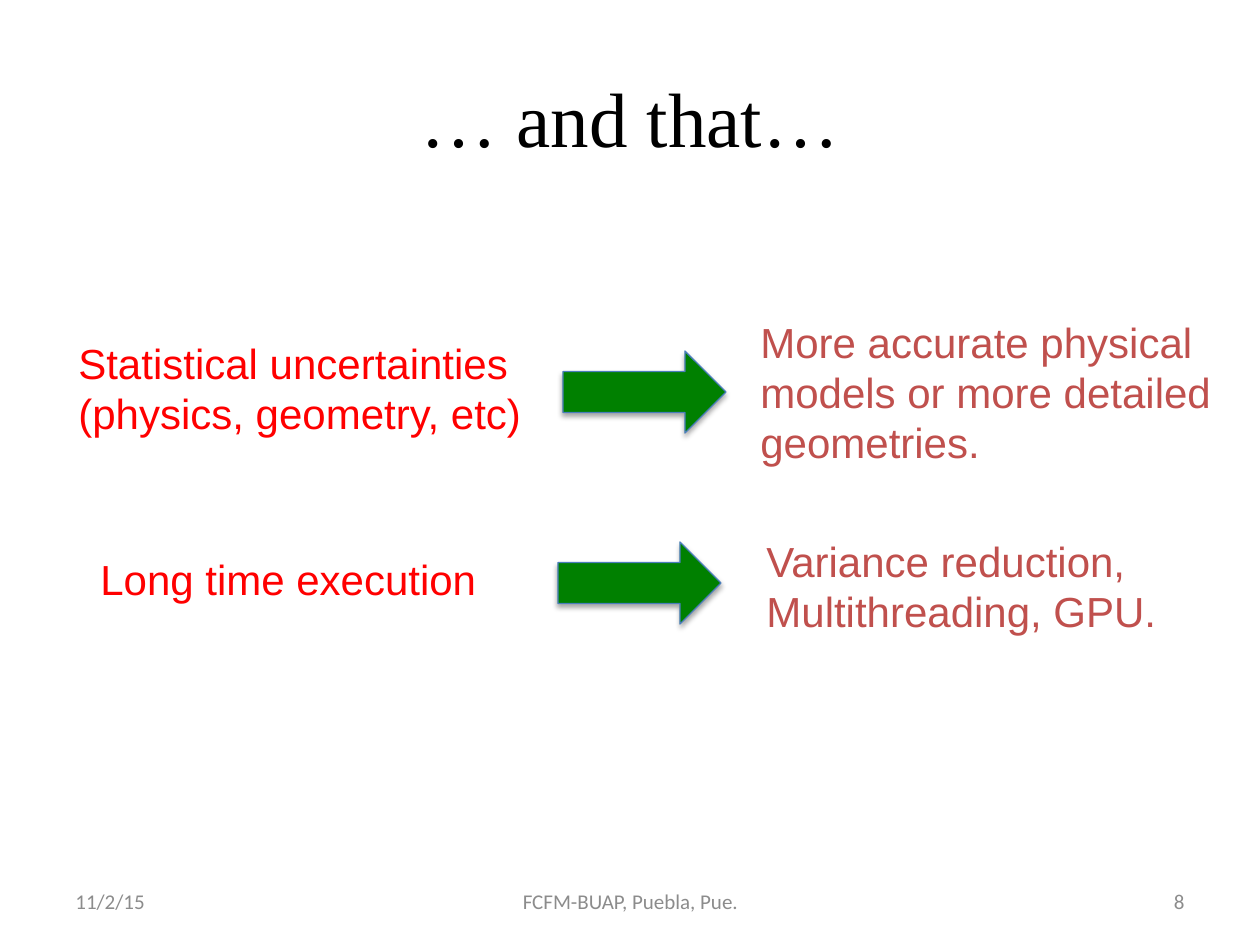
from dataclasses import dataclass

from lxml.etree import SubElement
from pptx import Presentation
from pptx.dml.color import RGBColor as Rgb
from pptx.enum.shapes import MSO_SHAPE as Shape
from pptx.enum.text import MSO_ANCHOR as Anchor, PP_ALIGN as Align
from pptx.oxml.ns import qn
from pptx.util import Inches, Pt


@dataclass(frozen=True)
class Theme:
    black: str = "000000"
    gray: str = "8C8C8C"
    red: str = "FF0000"
    brick: str = "C0504D"
    green: str = "008000"
    blue: str = "4B7EBC"
    big: int = 44
    mid: int = 24
    small: int = 12
    serif: str = "Times New Roman"
    sans: str = "Arial"
    foot: str = "Calibri"


THEME = Theme()
PX = Inches(1) / 126

TITLE = ("… and that…", (63, 38, 1134, 157))
FOOTER = [
    ("11/2/15", 63, 294, Align.LEFT),
    ("FCFM-BUAP, Puebla, Pue.", 431, 399, Align.CENTER),
    ("8", 903, 294, Align.RIGHT),
]
FOOT_TOP, FOOT_HIGH = 876, 50
ROWS = [
    {
        "issue": ("Statistical uncertainties\n(physics, geometry, etc)", (66, 331, 472, 115)),
        "arrow": (563, 351),
        "remedy": ("More accurate physical\nmodels or more detailed\ngeometries.", (748, 310, 480, 165)),
    },
    {
        "issue": ("Long time execution", (88, 547, 406, 64)),
        "arrow": (558, 542),
        "remedy": ("Variance reduction,\nMultithreading, GPU.", (754, 529, 420, 115)),
    },
]
ARROW = (163, 82)


def scale(box):
    return [round(n * PX) for n in box]


def write(slide, text, box, size, face, color, align=Align.LEFT, anchor=Anchor.TOP, wrap=True):
    frame = slide.shapes.add_textbox(*scale(box)).text_frame
    frame.word_wrap = wrap
    frame.vertical_anchor = anchor
    frame.text = text
    for para in frame.paragraphs:
        para.alignment = align
        for run in para.runs:
            run.font.size = Pt(size)
            run.font.name = face
            run.font.color.rgb = Rgb.from_string(color)


def shade(shape):
    shape.shadow.inherit = False
    effects = shape.fill._xPr.find(qn("a:effectLst"))
    outer = SubElement(
        effects, qn("a:outerShdw"), blurRad=str(Pt(3.1)), dist=str(Pt(1.8)),
        dir="5400000", rotWithShape="0",
    )
    tint = SubElement(outer, qn("a:srgbClr"), val=THEME.black)
    SubElement(tint, qn("a:alpha"), val="35000")


def point(slide, spot):
    arrow = slide.shapes.add_shape(Shape.RIGHT_ARROW, *scale(spot + ARROW))
    arrow.fill.solid()
    arrow.fill.fore_color.rgb = Rgb.from_string(THEME.green)
    arrow.line.color.rgb = Rgb.from_string(THEME.blue)
    arrow.line.width = Pt(0.75)
    shade(arrow)


def main():
    deck = Presentation()
    deck.slide_width, deck.slide_height = Inches(10), Inches(7.5)
    slide = deck.slides.add_slide(deck.slide_layouts[6])
    write(slide, *TITLE, THEME.big, THEME.serif, THEME.black, Align.CENTER, Anchor.MIDDLE)
    for text, left, width, align in FOOTER:
        box = (left, FOOT_TOP, width, FOOT_HIGH)
        write(slide, text, box, THEME.small, THEME.foot, THEME.gray, align, Anchor.MIDDLE)
    for row in ROWS:
        write(slide, *row["issue"], THEME.mid, THEME.sans, THEME.red, wrap=False)
        point(slide, row["arrow"])
        write(slide, *row["remedy"], THEME.mid, THEME.sans, THEME.brick, wrap=False)
    deck.save("out.pptx")


if __name__ == "__main__":
    main()
